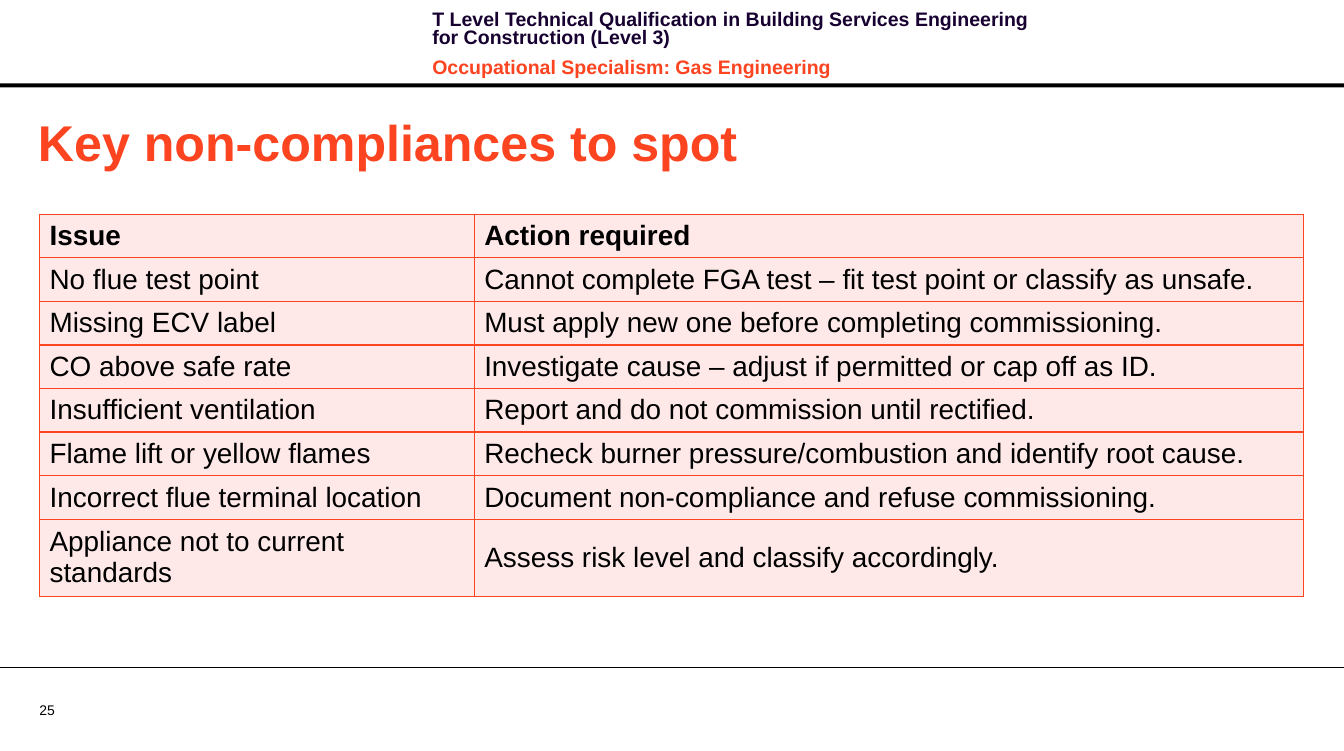
import pptx
import pptx.dml.color
import pptx.enum.shapes
import pptx.enum.text
import pptx.oxml.ns
import pptx.util
from lxml import etree

Cm, Pt = pptx.util.Cm, pptx.util.Pt
RGB = pptx.dml.color.RGBColor.from_string
MIDDLE = pptx.enum.text.MSO_ANCHOR.MIDDLE
TOP = pptx.enum.text.MSO_ANCHOR.TOP

QUALIFICATION = "T Level Technical Qualification in Building Services Engineering for Construction (Level 3)"
SPECIALISM = "Occupational Specialism: Gas Engineering"
TITLE = "Key non-compliances to spot"
PAGE = "25"
ROWS = [
    ("Issue", "Action required"),
    ("No flue test point", "Cannot complete FGA test – fit test point or classify as unsafe."),
    ("Missing ECV label", "Must apply new one before completing commissioning."),
    ("CO above safe rate", "Investigate cause – adjust if permitted or cap off as ID."),
    ("Insufficient ventilation", "Report and do not commission until rectified."),
    ("Flame lift or yellow flames", "Recheck burner pressure/combustion and identify root cause."),
    ("Incorrect flue terminal location", "Document non-compliance and refuse commissioning."),
    ("Appliance not to current standards", "Assess risk level and classify accordingly."),
]
THEME = {
    "font": "Arial", "ink": "000000", "navy": "170130", "accent": "FC4421", "tint": "FEE9E8",
    "title": 36, "table": 20, "header": 14, "page": 10,
}
WIDTH, HEIGHT = 34.01, 19.0
COLUMNS = (11.0, 20.98)
ROW_HEIGHT, LAST_ROW_HEIGHT = 1.04, 1.83


def style(p, size, color, bold=False):
    formats = {"name": THEME["font"], "size": Pt(THEME[size]), "bold": bold}
    for r in p.runs:
        for name, value in formats.items():
            setattr(r.font, name, value)
        r.font.color.rgb = RGB(THEME[color])


def add_text(s, box, lines, size, anchor, bold=True, inset=True):
    """Add a text box; lines holds (text, colour name) pairs."""
    tf = s.shapes.add_textbox(*map(Cm, box)).text_frame
    tf.word_wrap = True
    tf.vertical_anchor = anchor
    if not inset:
        for side in ("left", "right", "top", "bottom"):
            setattr(tf, f"margin_{side}", 0)
    tf.text = "\n".join(text for text, _ in lines)
    for p, (_, color) in zip(tf.paragraphs, lines):
        style(p, size, color, bold)
    return tf


def add_border(cell):
    tc_pr = cell._tc.get_or_add_tcPr()
    qn = pptx.oxml.ns.qn
    for i, side in enumerate(("lnL", "lnR", "lnT", "lnB")):
        ln = etree.Element(qn(f"a:{side}"), w=str(Pt(1)))
        fill = etree.SubElement(ln, qn("a:solidFill"))
        etree.SubElement(fill, qn("a:srgbClr"), val=THEME["accent"])
        tc_pr.insert(i, ln)


def add_rules(s):
    bar = s.shapes.add_shape(pptx.enum.shapes.MSO_SHAPE.RECTANGLE, 0, Cm(2.11), Cm(WIDTH), Cm(0.1))
    bar.shadow.inherit = False
    bar.fill.solid()
    bar.fill.fore_color.rgb = RGB(THEME["ink"])
    bar.line.fill.background()

    y = Cm(16.89)
    rule = s.shapes.add_connector(pptx.enum.shapes.MSO_CONNECTOR.STRAIGHT, 0, y, Cm(WIDTH), y)
    rule.line.color.rgb = RGB(THEME["ink"])
    rule.line.width = Pt(0.75)
    etree.SubElement(rule._element.spPr, pptx.oxml.ns.qn("a:effectLst"))


def add_issue_table(s):
    heights = [ROW_HEIGHT] * (len(ROWS) - 1) + [LAST_ROW_HEIGHT]
    table = s.shapes.add_table(len(ROWS), len(COLUMNS), Cm(1), Cm(5.42),
                               Cm(sum(COLUMNS)), Cm(sum(heights))).table
    table.horz_banding = False
    for column, width in zip(table.columns, COLUMNS):
        column.width = Cm(width)
    for i, (row, height, texts) in enumerate(zip(table.rows, heights, ROWS)):
        row.height = Cm(height)
        for cell, text in zip(row.cells, texts):
            cell.text = text
            cell.vertical_anchor = MIDDLE
            cell.fill.solid()
            cell.fill.fore_color.rgb = RGB(THEME["tint"])
            style(cell.text_frame.paragraphs[0], "table", "ink", bold=i == 0)
            add_border(cell)


def main():
    prs = pptx.Presentation()
    prs.slide_width, prs.slide_height = Cm(WIDTH), Cm(HEIGHT)
    s = prs.slides.add_slide(prs.slide_layouts[6])
    add_rules(s)
    add_text(s, (1, 17.75, 1.63, 0.43), [(PAGE, "ink")], "page", MIDDLE, bold=False, inset=False)
    header = add_text(s, (10.69, 0.18, 16.18, 1.63),
                      [(QUALIFICATION, "navy"), (SPECIALISM, "accent")], "header", TOP)
    for p in header.paragraphs:
        p.line_spacing = Pt(13.1)
        p.space_after = Pt(4)
    header.paragraphs[1].space_before = Pt(4)
    add_text(s, (0.71, 2.67, 32.31, 1.8), [(TITLE, "accent")], "title", MIDDLE)
    add_issue_table(s)
    prs.save("out.pptx")


if __name__ == "__main__":
    main()
